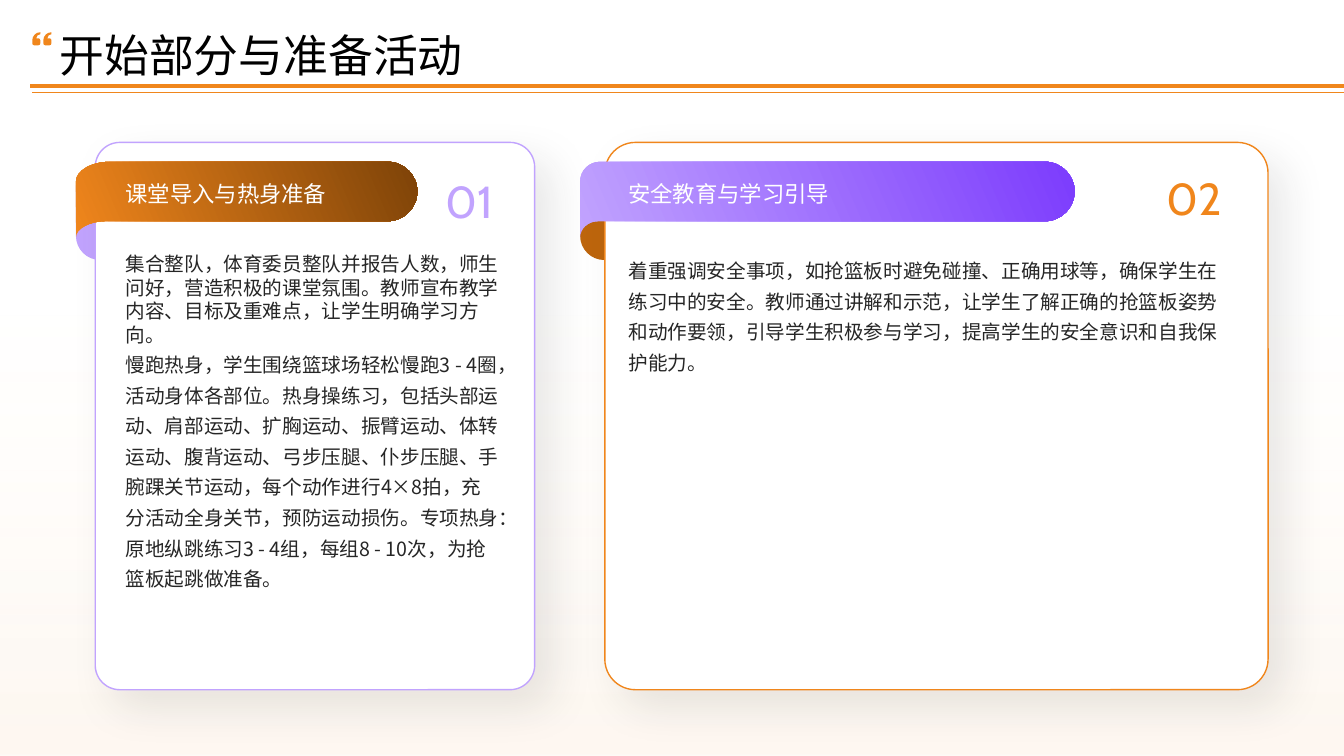
import pptx
import pptx.util
import pptx.dml.color
import pptx.enum.shapes
import pptx.enum.text
import pptx.oxml
import pptx.oxml.ns
from dataclasses import dataclass

COLS, ROWS = 133.33, 75  # grid of the slide, ten cells to the inch
ALIGN = pptx.enum.text.PP_ALIGN
ANCHOR = pptx.enum.text.MSO_ANCHOR
KIND = pptx.enum.shapes.MSO_SHAPE


@dataclass(frozen=True)
class Theme:
    orange: str = "F0861C"
    brown: str = "7E4308"
    rust: str = "BD650C"
    lilac: str = "C1A3FE"
    violet: str = "7C3CFD"
    white: str = "FFFFFF"
    black: str = "000000"
    ink: str = "262626"
    cream: str = "FCE7D2"
    peach: str = "F9CFA4"
    sans: str = "Noto Sans CJK SC"
    digit: str = "Cabin"
    big: int = 32
    head: int = 16
    body: int = 14


THEME = Theme()


def cell(size):
    return pptx.util.Inches(size / 10)


def box(*sizes):
    return [cell(size) for size in sizes]


def tint(code):
    return pptx.dml.color.RGBColor.from_string(code)


def node(tag, rest="/>"):
    return pptx.oxml.parse_xml(f'<a:{tag} {pptx.oxml.ns.nsdecls("a")} {rest}')


def apply(thing, values):
    for name, value in values.items():
        setattr(thing, name, value)


# Fills
def flat(shape, code):
    shape.fill.solid()
    shape.fill.fore_color.rgb = tint(code)


def fade(shape, stops, angle):
    """Stops are (share, colour, alpha); the angle turns anticlockwise."""
    shape.fill.gradient()
    shape.fill.gradient_angle = angle
    for stop, (share, code, _) in zip(shape.fill.gradient_stops, stops):
        stop.position = share
        stop.color.rgb = tint(code)
    marks = shape._element.iter(pptx.oxml.ns.qn("a:srgbClr"))
    for mark, (_, _, alpha) in zip(marks, stops):
        if alpha < 1:
            mark.append(node("alpha", f'val="{round(alpha * 100000)}"/>'))


def shade(shape):
    glow = node("outerShdw", f'blurRad="{pptx.util.Pt(30)}" dist="{pptx.util.Pt(17)}" '
                f'dir="2700000" algn="tl" rotWithShape="0"><a:srgbClr val="{THEME.ink}">'
                '<a:alpha val="10000"/></a:srgbClr></a:outerShdw>')
    shape._element.spPr.find(pptx.oxml.ns.qn("a:effectLst")).append(glow)


# Outlines: a loop is a start point, then steps of one point (line) or three (curve)
def turn(start, corner, end):
    """A quarter of an ellipse that rounds the corner."""
    grips = [tuple(p + 0.55 * (c - p) for p, c in zip(point, corner))
             for point in (start, end)]
    return (*grips, end)


def form(slide, loops):
    pen = None
    for start, *steps in loops:
        if pen:
            pen.move_to(*box(*start))
        else:
            pen = slide.shapes.build_freeform(*box(*start))
        pen.add_line_segments([box(*p) for step in steps for p in step], close=True)
    shape = pen.convert_to_shape()
    legs = shape._element.iter(pptx.oxml.ns.qn("a:lnTo"))
    legs = iter(list(legs))
    for step in (step for _, *steps in loops for step in steps):
        group = [next(legs) for _ in step]
        if len(group) == 3:
            curve = node("cubicBezTo")
            group[0].addprevious(curve)
            for leg in group:
                curve.append(leg[0])
                leg.getparent().remove(leg)
    shape.shadow.inherit = False
    shape.line.fill.background()
    return shape


def fold(slide, left, code):
    end = left + 23.65
    low = (left, 23.4)
    shape = form(slide, [[(end, 18.4), ((left, 18.4),), (low,),
                          turn(low, (left, 25.8), (left + 2.4, 25.8)),
                          ((end, 25.8),)]])
    flat(shape, code)


def band(slide, left, right, bend, codes):
    top, mid, base, foot = 16.05, 19, 21.95, 23.6
    cap, tail = right - 2.95, left + 0.88 * bend
    shape = form(slide, [[
        (left + bend, top), ((cap, top),),
        turn((cap, top), (right, top), (right, mid)),
        turn((right, mid), (right, base), (cap, base)),
        ((tail, base),),
        turn((tail, base), (left, base), (left, foot)),
        ((left, 18),),
        turn((left, 18), (left, top), (left + bend, top))]])
    fade(shape, [(share, code, 1) for share, code in enumerate(codes)], 23)


def quote(slide, left, top):
    def mark(x):
        def at(across, down):
            return x + across, top + down
        return [at(0.6, 1.3), (at(0.2, 1.3),),
                turn(at(0.2, 1.3), at(0, 1.3), at(0, 1.1)), (at(0, 0.8),),
                turn(at(0, 0.8), at(0, 0), at(0.8, 0)), (at(0.8, 0.2),),
                turn(at(0.8, 0.2), at(0.4, 0.2), at(0.4, 0.6)), (at(0.6, 0.6),),
                turn(at(0.6, 0.6), at(0.8, 0.6), at(0.8, 0.8)), (at(0.8, 1.1),),
                turn(at(0.8, 1.1), at(0.8, 1.3), at(0.6, 1.3))]
    flat(form(slide, [mark(left), mark(left + 1.1)]), THEME.orange)


# Boxes, text and rules
def block(slide, kind, area):
    shape = slide.shapes.add_shape(kind, *box(*area))
    shape.shadow.inherit = False
    shape.line.fill.background()
    return shape


def card(slide, area, code):
    shape = block(slide, KIND.ROUNDED_RECTANGLE, area)
    shape.adjustments[0] = 0.056
    flat(shape, THEME.white)
    shape.line.color.rgb = tint(code)
    shape.line.width = pptx.util.Pt(1)
    shade(shape)


def text(slide, area, words, size, code, space=1.0, font=THEME.sans,
         anchor=ANCHOR.MIDDLE, align=ALIGN.LEFT, inset=(0, 0)):
    frame = slide.shapes.add_textbox(*box(*area)).text_frame
    side, edge = box(*inset)
    apply(frame, dict(word_wrap=True, vertical_anchor=anchor, margin_left=side,
                      margin_right=side, margin_top=edge, margin_bottom=edge))
    para = frame.paragraphs[0]
    apply(para, dict(alignment=align, line_spacing=space))
    run = para.add_run()
    run.text = words
    apply(run.font, dict(size=pptx.util.Pt(size), name=font))
    run.font.color.rgb = tint(code)
    run.font._element.append(node("ea", f'typeface="{font}"/>'))


def rule(slide, top, width):
    line = slide.shapes.add_connector(pptx.enum.shapes.MSO_CONNECTOR.STRAIGHT,
                                      *box(3.2, top, COLS, top))
    line.line.color.rgb = tint(THEME.orange)
    line.line.width = pptx.util.Pt(width)
    line.line._ln.set("cap", "sq")
    line._element.spPr.append(node("effectLst"))


def panel(slide, area, ends, inner, spans, number, head, words, look):
    """A card with its fold, number, wording and heading band."""
    back, edge, codes, bend, anchor = look
    label, span = spans
    digits, left, wide = number
    fold(slide, ends[0], back)
    card(slide, area, edge)
    text(slide, (inner, 25, span, 41), words, THEME.body, THEME.ink, 1.3,
         anchor=ANCHOR.TOP)
    text(slide, (left, 16.4, wide, 6.4), digits, THEME.big, edge, 1.1,
         THEME.digit, anchor, ALIGN.RIGHT, (1, 0.5))
    band(slide, *ends, bend, codes)
    text(slide, (inner, 16.5, label, 5.4), head, THEME.head, THEME.white)


def main():
    deck = pptx.Presentation()
    apply(deck, dict(slide_width=cell(COLS), slide_height=cell(ROWS)))
    slide = deck.slides.add_slide(deck.slide_layouts[6])

    # Background
    fade(block(slide, KIND.RECTANGLE, (-0.4, 0, 134.2, ROWS)),
         [(0.41, THEME.cream, 0), (0.97, THEME.peach, 0.15)], 270)

    # Panels
    panel(slide, (9.45, 14.13, 43.6, 54.3), (7.53, 41.4), 12.45, (27, 37.1),
          ("01", 39.4, 10.5), "课堂导入与热身准备",
          "集合整队，体育委员整队并报告人数，师生问好，营造积极的课堂氛围。教师宣布教学内容、目标及重难点，让学生明确学习方向。\n"
          "慢跑热身，学生围绕篮球场轻松慢跑3 - 4圈，活动身体各部位。热身操练习，包括头部运动、肩部运动、扩胸运动、振臂运动、体转运动、腹背运动、弓步压腿、仆步压腿、手腕踝关节运动，每个动作进行4×8拍，充分活动全身关节，预防运动损伤。专项热身：原地纵跳练习3 - 4组，每组8 - 10次，为抢篮板起跳做准备。",
          (THEME.lilac, THEME.lilac, (THEME.orange, THEME.brown), 3.4, ANCHOR.MIDDLE))
    panel(slide, (60, 14.13, 65.8, 54.3), (57.55, 106.6), 62.34, (40.6, 59.2),
          ("02", 106.6, 15.6), "安全教育与学习引导",
          "着重强调安全事项，如抢篮板时避免碰撞、正确用球等，确保学生在练习中的安全。教师通过讲解和示范，让学生了解正确的抢篮板姿势和动作要领，引导学生积极参与学习，提高学生的安全意识和自我保护能力。",
          (THEME.rust, THEME.orange, (THEME.lilac, THEME.violet), 2, ANCHOR.BOTTOM))

    # Title
    text(slide, (5.9, 2.5, 121.7, 4.7), "开始部分与准备活动", THEME.big, THEME.black, 1.2)
    quote(slide, 3.2, 3.2)
    for top, width in ((8.5, 3), (9.2, 0.75)):
        rule(slide, top, width)

    deck.save("out.pptx")


if __name__ == "__main__":
    main()
